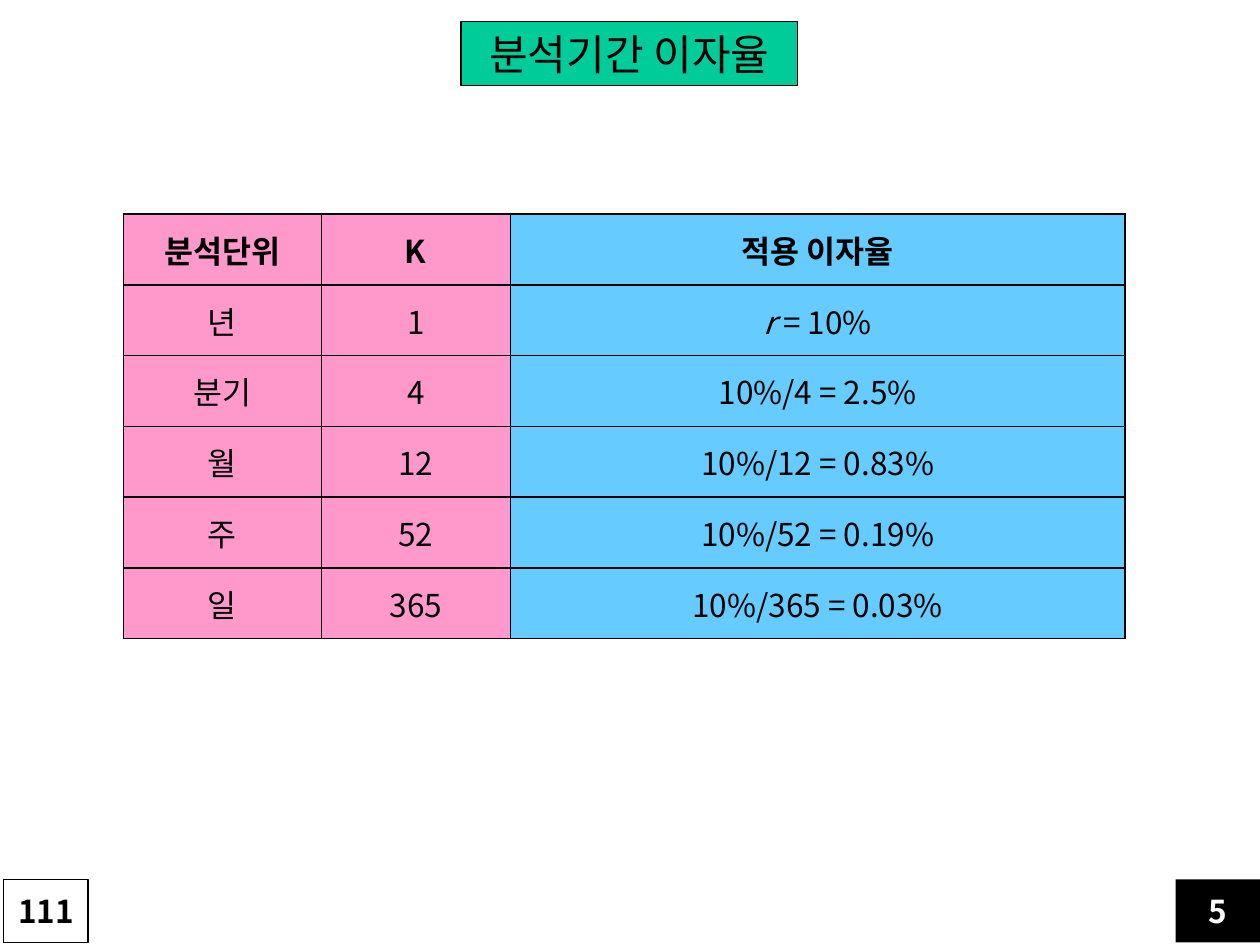
from lxml.etree import SubElement
from pptx import Presentation
from pptx.dml.color import RGBColor
from pptx.enum.shapes import MSO_SHAPE as Shape
from pptx.enum.text import MSO_ANCHOR as Anchor, PP_ALIGN as Align
from pptx.oxml import parse_xml
from pptx.oxml.ns import nsdecls, qn
from pptx.util import Inches, Pt

FONT = "Noto Sans CJK KR"
BLACK, WHITE, GREEN, PINK, BLUE = "000000", "FFFFFF", "00CC99", "FF99CC", "66CCFF"


def paint(target, tone):
    target.solid()
    target.fore_color.rgb = RGBColor.from_string(tone)


def write(frame, runs, size=18, tone=BLACK, bold=False):
    """Fill a frame with one centred line of (text, italic) runs."""
    frame.vertical_anchor = Anchor.MIDDLE
    para = frame.paragraphs[0]
    para.alignment = Align.CENTER
    for text, slant in runs:
        run = para.add_run()
        run.text = text
        font = run.font
        font.name, font.size, font.bold, font.italic = FONT, Pt(size), bold, slant
        paint(font.fill, tone)
        SubElement(font._element, qn("a:ea")).set("typeface", FONT)


deck = Presentation()
deck.slide_width, deck.slide_height = Inches(10), Inches(7.5)
slide = deck.slides.add_slide(deck.slide_layouts[6])

# Title and the two page boxes: place, fill, line, text, size, text colour, bold
boxes = [
    ((3.66, 0.17, 2.67, 0.51), GREEN, BLACK, "분석기간 이자율", 24, BLACK, False),
    ((9.33, 6.98, 0.67, 0.5), BLACK, None, "5", 18, WHITE, True),
    ((0.03, 6.98, 0.67, 0.5), WHITE, BLACK, "111", 18, BLACK, True),
]
for place, fill, edge, text, size, tone, bold in boxes:
    box = slide.shapes.add_shape(Shape.RECTANGLE, *map(Inches, place))
    box.shadow.inherit = False
    paint(box.fill, fill)
    if edge:
        paint(box.line.fill, edge)
        box.line.width = Pt(0.75)
    else:
        box.line.fill.background()
    box.text_frame.word_wrap = False
    write(box.text_frame, [(text, False)], size, tone, bold)

# Rate table: the yearly 10% divided by the number of periods
rows = [["분석단위", "K", [("적용 이자율", False)]],
        ["년", "1", [("r ", True), ("= 10%", False)]]]
for unit, count in [("분기", 4), ("월", 12), ("주", 52), ("일", 365)]:
    rows.append([unit, str(count), [(f"10%/{count} = {round(10 / count, 2)}%", False)]])

widths, tones = [1.57, 1.5, 4.88], [PINK, PINK, BLUE]
high = 3.37 / len(rows)
grid = slide.shapes.add_table(len(rows), len(widths), Inches(0.98), Inches(1.7),
                              Inches(sum(widths)), Inches(high * len(rows))).table
for col, width in zip(grid.columns, widths):
    col.width = Inches(width)
for r, row in enumerate(rows):
    grid.rows[r].height = Inches(high)
    for c, (item, tone) in enumerate(zip(row, tones)):
        cell = grid.cell(r, c)
        runs = [(item, False)] if isinstance(item, str) else item
        write(cell.text_frame, runs, bold=r == 0)
        cell.vertical_anchor = Anchor.MIDDLE
        paint(cell.fill, tone)
        props = cell._tc.get_or_add_tcPr()
        for n, side in enumerate("LRTB"):
            props.insert(n, parse_xml(
                f'<a:ln{side} {nsdecls("a")} w="{Pt(1)}"><a:solidFill>'
                f'<a:srgbClr val="{BLACK}"/></a:solidFill></a:ln{side}>'))

deck.save("out.pptx")
